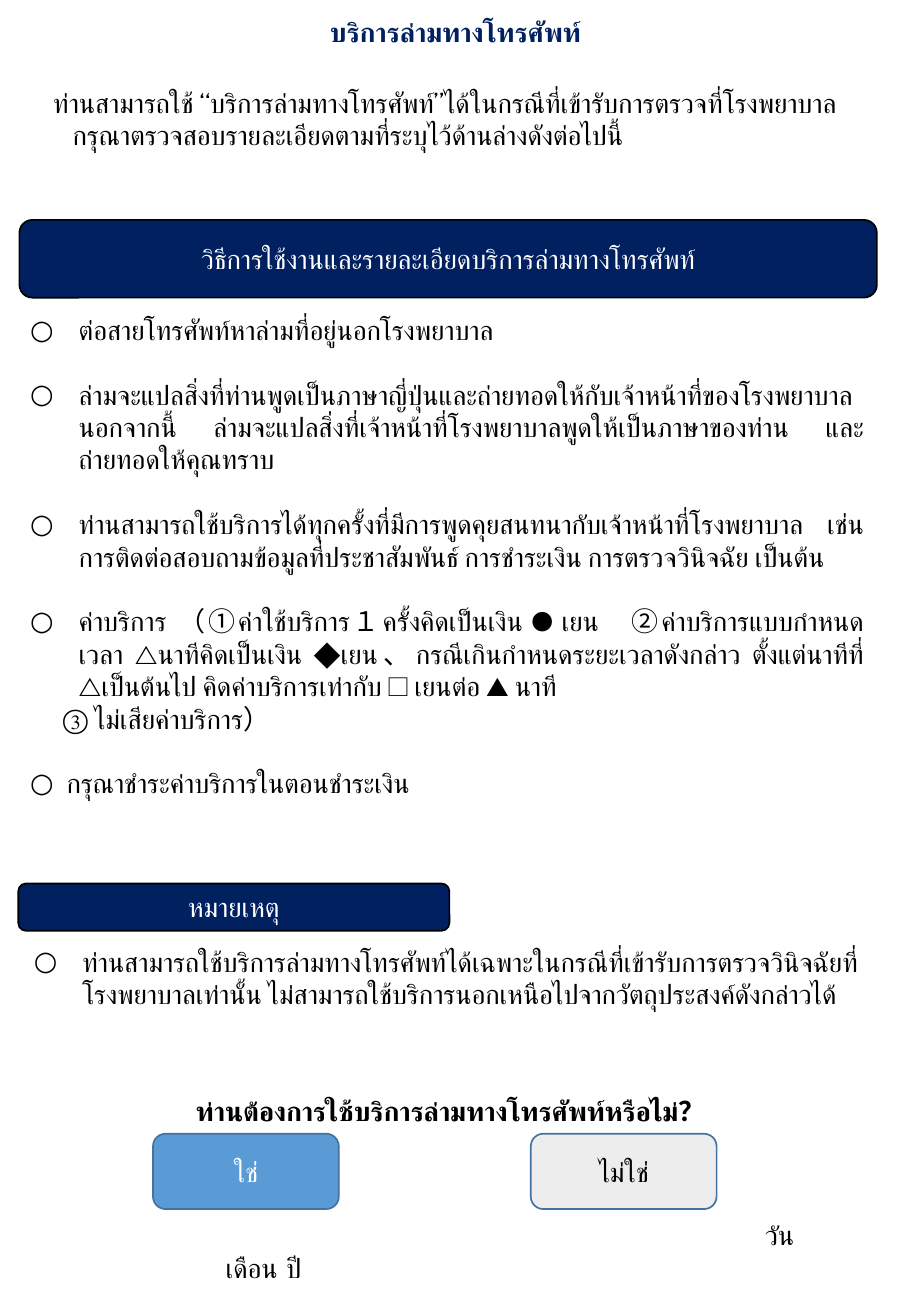
import pptx
import pptx.util
import pptx.dml.color
import pptx.enum.shapes
import pptx.enum.text
import pptx.oxml
import pptx.oxml.ns
from pptx.util import Inches

COLOURS = {
    "navy": "002060",
    "black": "000000",
    "white": "FFFFFF",
    "blue": "5B9BD5",
    "grey": "EDEDED",
    "edge": "43739E",
}
ALIGN = pptx.enum.text.PP_ALIGN
ANCHOR = pptx.enum.text.MSO_ANCHOR
LINE_HEIGHT = 19.2


def colour(name):
    return pptx.dml.color.RGBColor.from_string(COLOURS[name])


def add_child(parent, tag, **attributes):
    child = pptx.oxml.parse_xml(f"<a:{tag} {pptx.oxml.ns.nsdecls('a')}/>")
    for key, value in attributes.items():
        child.set(key, str(value))
    parent.append(child)
    return child


class Leaflet:
    font = "Cabin"
    size = pptx.util.Pt(16)

    def __init__(self, width, height):
        self.deck = pptx.Presentation()
        self.deck.slide_width = Inches(width)
        self.deck.slide_height = Inches(height)
        self.page = self.deck.slides.add_slide(self.deck.slide_layouts[5])

    def add_span(self, para, text, ink="black", bold=False):
        span = para.add_run()
        span.text = text
        formats = {"name": self.font, "size": self.size, "bold": bold}
        for key, value in formats.items():
            setattr(span.font, key, value)
        span.font.color.rgb = colour(ink)
        properties = span._r.get_or_add_rPr()
        for tag in ("ea", "cs"):
            add_child(properties, tag, typeface=self.font)

    def fill_box(self, box, paragraphs, anchor=ANCHOR.TOP, ink="black", bold=False):
        frame = box.text_frame
        formats = {"word_wrap": True, "vertical_anchor": anchor,
                   "auto_size": pptx.enum.text.MSO_AUTO_SIZE.NONE}
        for key, value in formats.items():
            setattr(frame, key, value)
        for index, entry in enumerate(paragraphs):
            para = frame.paragraphs[0] if index == 0 else frame.add_paragraph()
            para.alignment = entry.get("align", ALIGN.LEFT)
            para.space_before = pptx.util.Pt(entry.get("before", 0))
            self.indent(para, entry)
            self.add_span(para, entry["text"], ink, bold)

    def indent(self, para, entry):
        properties = para._p.get_or_add_pPr()
        left = Inches(entry.get("left", 0))
        properties.set("marL", str(left))
        properties.set("indent", str(-left if "bullet" in entry else 0))
        if "bullet" in entry:
            add_child(properties, "buFont", typeface=self.font)
            add_child(properties, "buChar", char=entry["bullet"])
        if "tabs" in entry:
            stops = add_child(properties, "tabLst")
            for stop in entry["tabs"]:
                add_child(stops, "tab", pos=Inches(stop), algn="l")

    def title(self, place, text):
        box = self.page.shapes.title
        for key, value in zip(("left", "top", "width", "height"), place):
            setattr(box, key, Inches(value))
        self.fill_box(box, [{"text": text, "align": ALIGN.CENTER}], ink="navy", bold=True)

    def text(self, place, paragraphs, bold=False):
        box = self.page.shapes.add_textbox(*map(Inches, place))
        self.fill_box(box, paragraphs, bold=bold)

    def panel(self, place, text, fill="navy", line="black", ink="white"):
        box = self.page.shapes.add_shape(
            pptx.enum.shapes.MSO_SHAPE.ROUNDED_RECTANGLE, *map(Inches, place))
        box.shadow.inherit = False
        box.fill.solid()
        box.fill.fore_color.rgb = colour(fill)
        box.line.color.rgb = colour(line)
        box.line.width = pptx.util.Pt(1)
        self.fill_box(box, [{"text": text, "align": ALIGN.CENTER}], ANCHOR.MIDDLE, ink)


def item(text, left=0.4, before=LINE_HEIGHT, align=ALIGN.JUSTIFY):
    return {"text": text, "left": left, "before": before, "align": align, "bullet": "○"}


def main():
    leaflet = Leaflet(7.5, 10.83)
    leaflet.title((0, 0.08, 7.5, 0.37), "บริการล่ามทางโทรศัพท์")
    leaflet.text((0.22, 0.66, 7.04, 0.91), [
        {"text": "ท่านสามารถใช้ “บริการล่ามทางโทรศัพท์”ได้ในกรณีที่เข้ารับการตรวจที่โรงพยาบาล",
         "left": 0.12},
        {"text": "กรุณาตรวจสอบรายละเอียดตามที่ระบุไว้ด้านล่างดังต่อไปนี้", "left": 0.28},
    ])

    leaflet.panel((0.16, 1.81, 7.06, 0.64), "วิธีการใช้งานและรายละเอียดบริการล่ามทางโทรศัพท์")
    leaflet.text((0.15, 2.53, 7.06, 4.68), [
        item("ต่อสายโทรศัพท์หาล่ามที่อยู่นอกโรงพยาบาล", before=0),
        item("ล่ามจะแปลสิ่งที่ท่านพูดเป็นภาษาญี่ปุ่นและถ่ายทอดให้กับเจ้าหน้าที่ของโรงพยาบาล "
             "นอกจากนี้ ล่ามจะแปลสิ่งที่เจ้าหน้าที่โรงพยาบาลพูดให้เป็นภาษาของท่าน "
             "และถ่ายทอดให้คุณทราบ"),
        item("ท่านสามารถใช้บริการได้ทุกครั้งที่มีการพูดคุยสนทนากับเจ้าหน้าที่โรงพยาบาล เช่น "
             "การติดต่อสอบถามข้อมูลที่ประชาสัมพันธ์ การชำระเงิน การตรวจวินิจฉัย เป็นต้น"),
        item("ค่าบริการ （①ค่าใช้บริการ１ครั้งคิดเป็นเงิน ● เยน　②ค่าบริการแบบกำหนดเวลา "
             "△นาทีคิดเป็นเงิน ◆เยน、กรณีเกินกำหนดระยะเวลาดังกล่าว "
             "ตั้งแต่นาทีที่ △เป็นต้นไป คิดค่าบริการเท่ากับ □ เยนต่อ ▲ นาที"),
        {"text": "③ ไม่เสียค่าบริการ）", "left": 0.27, "align": ALIGN.JUSTIFY},
        item("กรุณาชำระค่าบริการในตอนชำระเงิน", left=0.3),
    ])

    leaflet.panel((0.15, 7.27, 3.55, 0.39), "หมายเหตุ")
    leaflet.text((0.18, 7.73, 7.06, 0.91), [
        item("ท่านสามารถใช้บริการล่ามทางโทรศัพท์ได้เฉพาะในกรณีที่เข้ารับการตรวจวินิจฉัยที่"
             "โรงพยาบาลเท่านั้น ไม่สามารถใช้บริการนอกเหนือไปจากวัตถุประสงค์ดังกล่าวได้",
             before=0, align=ALIGN.LEFT),
    ])

    leaflet.text((-0.04, 8.96, 7.5, 0.37), [
        {"text": "ท่านต้องการใช้บริการล่ามทางโทรศัพท์หรือไม่？", "align": ALIGN.CENTER},
    ], bold=True)
    answers = (("ใช่", 1.26, "blue", "white"), ("ไม่ใช่", 4.37, "grey", "black"))
    for answer, left, fill, ink in answers:
        leaflet.panel((left, 9.33, 1.53, 0.62), answer, fill, "edge", ink)

    leaflet.text((0.16, 9.98, 7.17, 0.72), [
        {"text": "วัน", "left": 6.04},
        {"text": "เดือน\tปี", "left": 1.6, "tabs": [3.52]},
    ])
    leaflet.deck.save("out.pptx")


if __name__ == "__main__":
    main()
